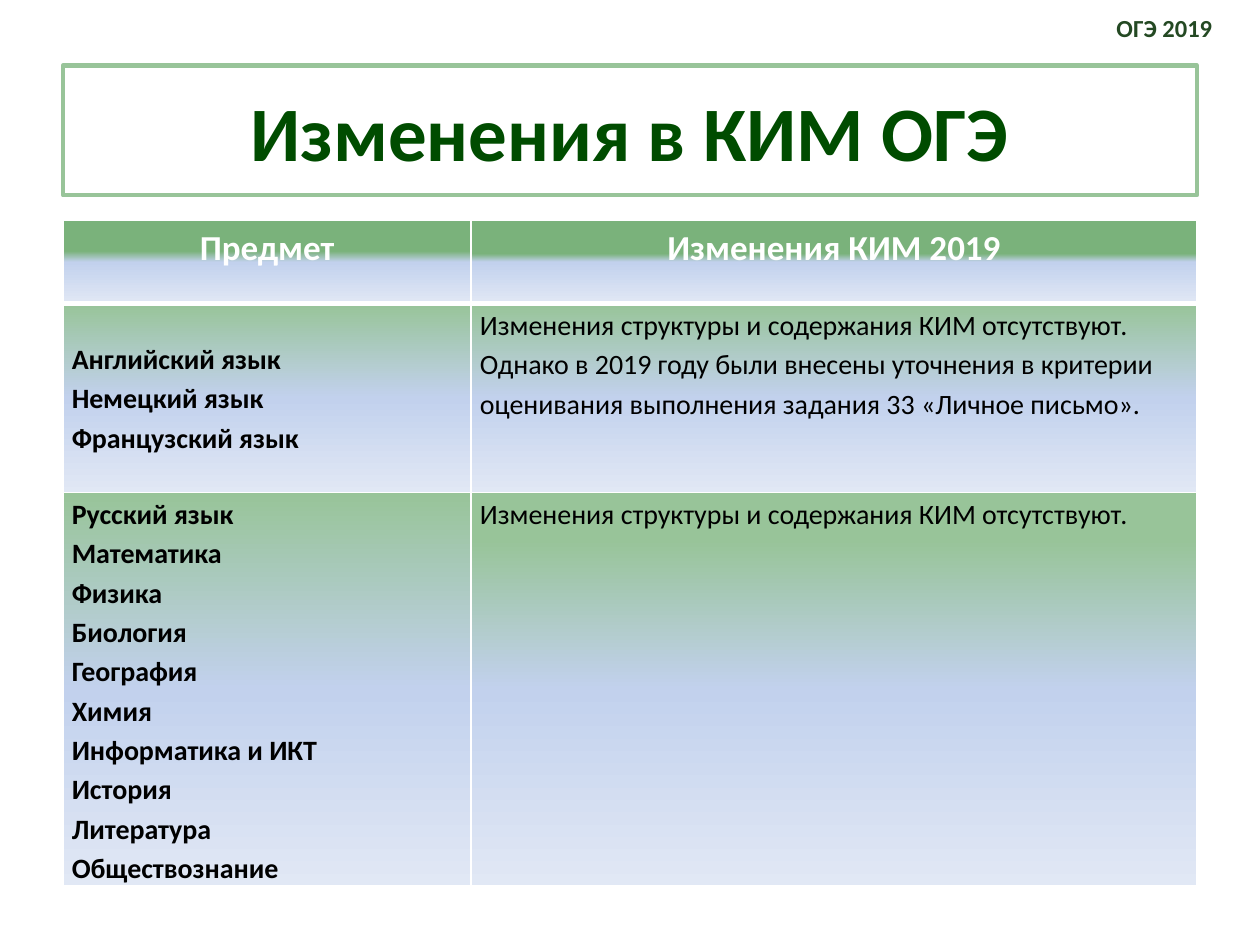
from lxml.etree import SubElement
from pptx import Presentation
from pptx.dml.color import RGBColor
from pptx.enum.shapes import MSO_SHAPE
from pptx.enum.text import MSO_ANCHOR, PP_ALIGN
from pptx.oxml.ns import qn
from pptx.util import Inches, Pt

WHITE = RGBColor(0xFF, 0xFF, 0xFF)
BLACK = RGBColor(0x00, 0x00, 0x00)
TITLE_GREEN = RGBColor(0x00, 0x4C, 0x00)
LABEL_GREEN = RGBColor(0x24, 0x49, 0x23)
HEADER_GREEN = RGBColor(0x7A, 0xB2, 0x7B)
BODY_GREEN = RGBColor(0x98, 0xC4, 0x99)
MIDDLE_BLUE = RGBColor(0xC2, 0xD1, 0xED)
PALE_BLUE = RGBColor(0xE1, 0xE8, 0xF5)

LANGUAGES = ["Английский язык", "Немецкий язык", "Французский язык"]
SUBJECTS = ["Русский язык", "Математика", "Физика", "Биология", "География", "Химия",
            "Информатика и ИКТ", "История", "Литература", "Обществознание"]
UNCHANGED = "Изменения структуры и содержания КИМ отсутствуют."
CLARIFIED = (UNCHANGED + " Однако в 2019 году были внесены уточнения в критерии "
             "оценивания выполнения задания 33 «Личное письмо».")


class SlideBuilder:
    """Holds the style and the current slide."""

    font_name = "Calibri"

    def __init__(self, page):
        self.page = page

    def fill_text(self, frame, lines, size, color, bold=True, align=PP_ALIGN.LEFT, spacing=None):
        frame.text = "\n".join(lines)
        frame.word_wrap = True
        for para in frame.paragraphs:
            para.alignment = align
            para.line_spacing = spacing
            for span in para.runs:
                span.font.name = self.font_name
                span.font.size = Pt(size)
                span.font.bold = bold
                span.font.color.rgb = color

    def title(self, text, left, top, width, height):
        box = self.page.shapes.add_shape(
            MSO_SHAPE.RECTANGLE, Inches(left), Inches(top), Inches(width), Inches(height))
        box.shadow.inherit = False
        box.fill.background()
        box.line.color.rgb = BODY_GREEN
        box.line.width = Pt(2.5)
        box.text_frame.vertical_anchor = MSO_ANCHOR.MIDDLE
        self.fill_text(box.text_frame, [text], 44, TITLE_GREEN, align=PP_ALIGN.CENTER)

    def label(self, text, left, top, width, height):
        box = self.page.shapes.add_textbox(
            Inches(left), Inches(top), Inches(width), Inches(height))
        box.text_frame.vertical_anchor = MSO_ANCHOR.MIDDLE
        self.fill_text(box.text_frame, [text], 14, LABEL_GREEN, align=PP_ALIGN.RIGHT)

    def table(self, left, top, widths, heights):
        table = self.page.shapes.add_table(
            len(heights), len(widths), Inches(left), Inches(top),
            Inches(sum(widths)), Inches(sum(heights))).table
        for column, width in zip(table.columns, widths):
            column.width = Inches(width)
        for row, height in zip(table.rows, heights):
            row.height = Inches(height)
        return table

    def cell(self, cell, lines, size, color, green, start,
             bold=True, align=PP_ALIGN.LEFT, top_margin=0, rule=1):
        cell.margin_left = cell.margin_right = Inches(0.07)
        cell.margin_top = Inches(top_margin)
        cell.margin_bottom = Inches(0)
        self.fill_text(cell.text_frame, lines, size, color, bold, align, 1.15)
        properties = cell._tc.get_or_add_tcPr()
        for side, width in (("L", 1), ("R", 1), ("T", 1), ("B", rule)):
            line = SubElement(properties, qn(f"a:ln{side}"), w=str(Pt(width)))
            solid = SubElement(line, qn("a:solidFill"))
            SubElement(solid, qn("a:srgbClr"), val=str(WHITE))
        gradient = SubElement(properties, qn("a:gradFill"), rotWithShape="1")
        stops = SubElement(gradient, qn("a:gsLst"))
        for position, shade in ((start, green), (50, MIDDLE_BLUE), (100, PALE_BLUE)):
            stop = SubElement(stops, qn("a:gs"), pos=str(position * 1000))
            SubElement(stop, qn("a:srgbClr"), val=str(shade))
        SubElement(gradient, qn("a:lin"), ang="5400000", scaled="0")


def main():
    deck = Presentation()
    deck.slide_width, deck.slide_height = Inches(10), Inches(7.5)
    builder = SlideBuilder(deck.slides.add_slide(deck.slide_layouts[6]))
    builder.title("Изменения в КИМ ОГЭ", 0.5, 0.52, 9, 1.03)

    table = builder.table(0.5, 1.75, [3.24, 5.76], [0.66, 1.5, 3.12])
    for column, (text, start) in enumerate([("Предмет", 37), ("Изменения КИМ 2019", 40)]):
        builder.cell(table.cell(0, column), [text], 20, WHITE, HEADER_GREEN, start,
                     align=PP_ALIGN.CENTER, rule=3)
    body = [(LANGUAGES, 0.27, CLARIFIED, 0), (SUBJECTS, 0, UNCHANGED, 12)]
    for row, (subjects, top_margin, change, start) in enumerate(body, 1):
        builder.cell(table.cell(row, 0), subjects, 16, BLACK, BODY_GREEN, 0,
                     top_margin=top_margin)
        builder.cell(table.cell(row, 1), [change], 16, BLACK, BODY_GREEN, start, bold=False)

    builder.label("ОГЭ 2019", 8.62, 0, 1.1, 0.44)
    deck.save("out.pptx")


if __name__ == "__main__":
    main()
